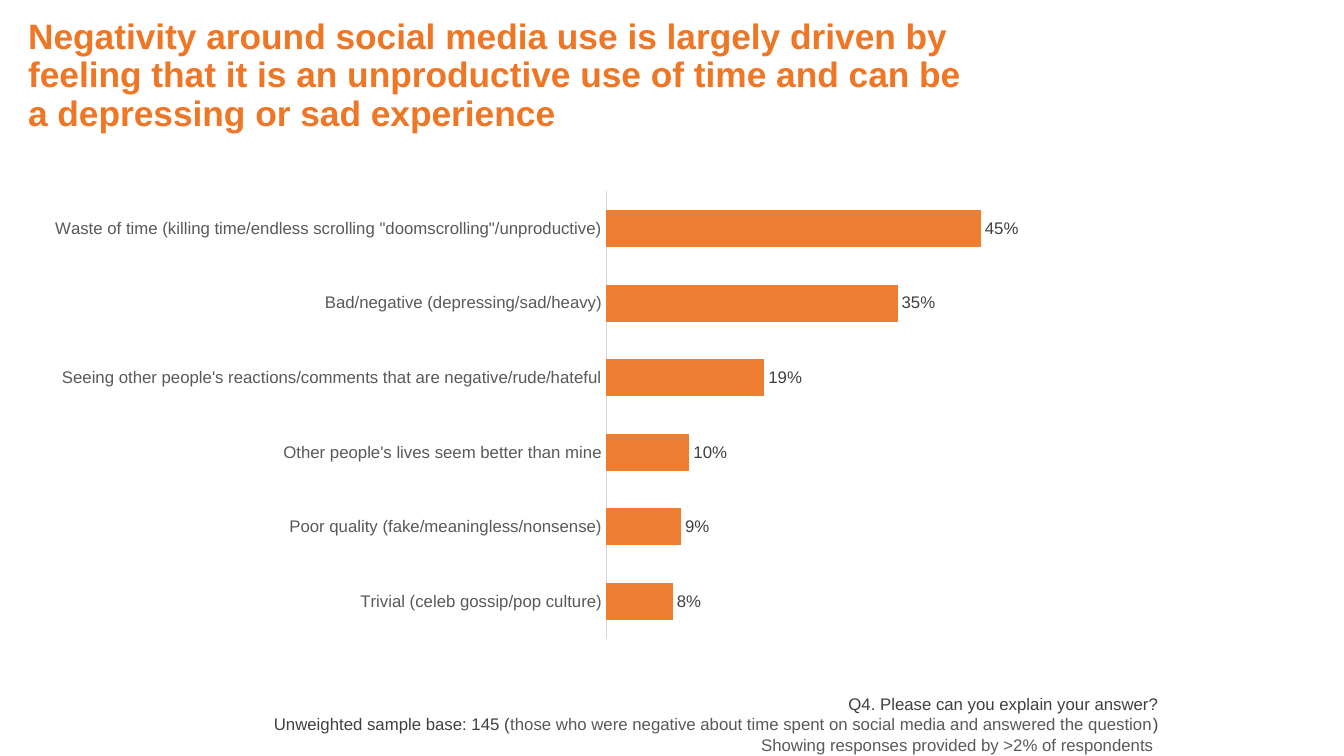
from pptx import Presentation
from pptx.chart.data import CategoryChartData as ChartData
from pptx.dml.color import RGBColor as Color
from pptx.enum.chart import XL_CHART_TYPE as Kind, XL_LABEL_POSITION as Spot, XL_TICK_MARK as Tick
from pptx.enum.text import MSO_ANCHOR as Anchor, PP_ALIGN as Align
from pptx.oxml import parse_xml
from pptx.oxml.ns import nsdecls
from pptx.util import Inches, Pt

theme = {
    "font": "Arial",
    "title": "EE7624", "bar": "ED7D31", "dark": "404040", "grey": "595959", "line": "D9D9D9",
    "head": 25.2, "body": 12,
}

deck = Presentation()
deck.slide_width, deck.slide_height = Inches(13.33), Inches(7.5)
slide = deck.slides.add_slide(deck.slide_layouts[6])


def place(left, top, wide, high):
    w, h = deck.slide_width, deck.slide_height
    return [int(n) for n in (left * w, top * h, wide * w, high * h)]


def style(font, size, color, bold=False):
    font.name = theme["font"]
    font.size = Pt(theme[size])
    font.bold = bold
    font.color.rgb = Color.from_string(theme[color])


data = ChartData(number_format="0%")
data.categories = [
    'Waste of time (killing time/endless scrolling "doomscrolling"/unproductive)',
    "Bad/negative (depressing/sad/heavy)",
    "Seeing other people's reactions/comments that are negative/rude/hateful",
    "Other people's lives seem better than mine",
    "Poor quality (fake/meaningless/nonsense)",
    "Trivial (celeb gossip/pop culture)",
]
data.add_series("Series 1", [0.45, 0.35, 0.19, 0.1, 0.09, 0.08])
chart = slide.shapes.add_chart(
    Kind.BAR_CLUSTERED, *place(0.0308, 0.2267, 0.7412, 0.6453), data).chart
chart.has_legend = False
chart.has_title = False
style(chart.font, "body", "grey")

cat = chart.category_axis
cat.reverse_order = True
cat.major_tick_mark = cat.minor_tick_mark = Tick.NONE
cat.format.line.color.rgb = Color.from_string(theme["line"])
cat.format.line.width = Pt(0.75)
style(cat.tick_labels.font, "body", "grey")

val = chart.value_axis
val.visible = False
val.has_major_gridlines = False
val.minimum_scale, val.maximum_scale = 0, 0.5

plot = chart.plots[0]
plot.gap_width = 100
plot.vary_by_categories = False
bars = plot.series[0]
bars.format.fill.solid()
bars.format.fill.fore_color.rgb = Color.from_string(theme["bar"])
tags = bars.data_labels
tags.show_value = True
tags.number_format = "0%"
tags.number_format_is_linked = False
tags.position = Spot.OUTSIDE_END
style(tags.font, "body", "dark")

area = chart._chartSpace.chart.plotArea
for old in area.findall("{*}layout"):
    area.remove(old)
area.insert(0, parse_xml(
    f'<c:layout {nsdecls("c")}><c:manualLayout><c:layoutTarget val="inner"/>'
    '<c:xMode val="edge"/><c:yMode val="edge"/><c:x val="0.567"/><c:y val="0.041"/>'
    '<c:w val="0.418"/><c:h val="0.917"/></c:manualLayout></c:layout>'))

head = slide.shapes.add_textbox(*place(0.0135, 0.0573, 0.7262, 0.088)).text_frame
head.word_wrap = True
head.vertical_anchor = Anchor.MIDDLE
head.text = ("Negativity around social media use is largely driven by feeling that it is "
             "an unproductive use of time and can be a depressing or sad experience")
head.paragraphs[0].line_spacing = 0.9
style(head.paragraphs[0].runs[0].font, "head", "title", True)

note = slide.shapes.add_textbox(*place(0.156, 0.9173, 0.706, 0.0813)).text_frame
note.word_wrap = True
note.vertical_anchor = Anchor.MIDDLE
note.margin_left = note.margin_right = note.margin_top = note.margin_bottom = 0
lines = [
    [("Q4. Please can you explain your answer?", "dark")],
    [("Unweighted sample base: 145 (", "dark"),
     ("those who were negative about time spent on social media and answered the question", "grey"),
     (")", "dark")],
    [("Showing responses provided by >2% of respondents ", "grey")],
]
for row, parts in enumerate(lines):
    para = note.add_paragraph() if row else note.paragraphs[0]
    para.alignment = Align.RIGHT
    for words, color in parts:
        run = para.add_run()
        run.text = words
        style(run.font, "body", color)

deck.save("out.pptx")
